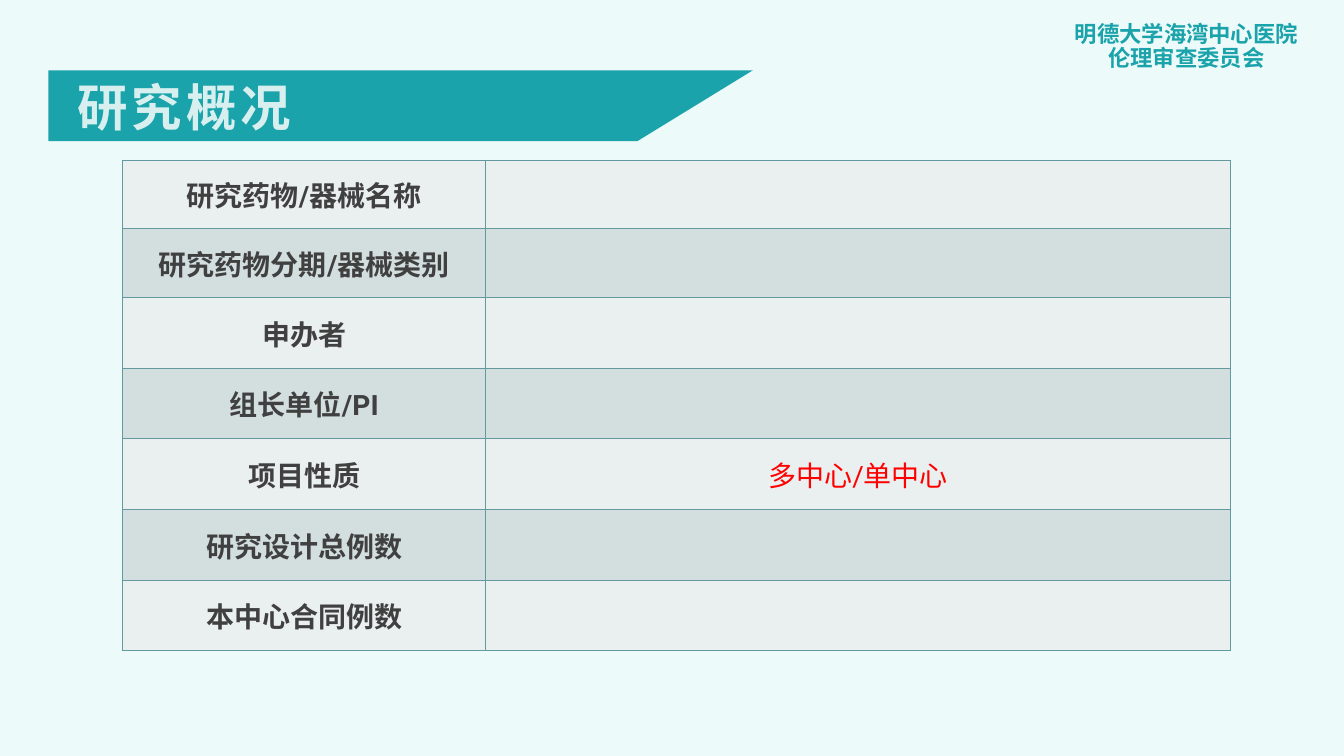
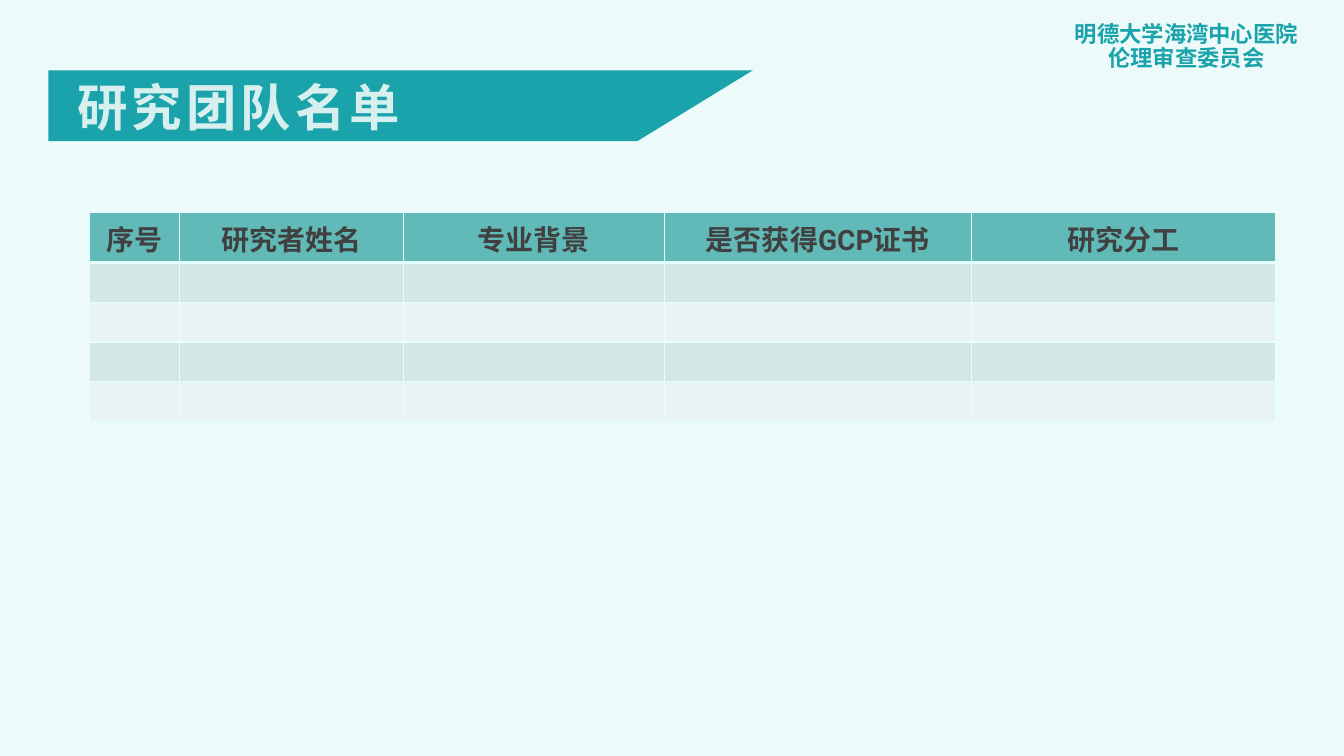
import pptx
import pptx.dml.color
import pptx.enum.text
import pptx.oxml.ns
import pptx.util
import lxml.etree

Pt = pptx.util.Pt
RGBColor = pptx.dml.color.RGBColor
qn = pptx.oxml.ns.qn
CENTER = pptx.enum.text.PP_ALIGN.CENTER
MIDDLE = pptx.enum.text.MSO_ANCHOR.MIDDLE
TOP = pptx.enum.text.MSO_ANCHOR.TOP

PAGE = RGBColor(0xED, 0xFA, 0xFA)
TEAL = RGBColor(0x1A, 0xA3, 0xAA)
TITLE_INK = RGBColor(0xD8, 0xEF, 0xEF)
INK = RGBColor(0x40, 0x40, 0x40)
RED = RGBColor(0xFF, 0x00, 0x00)
OVERVIEW_BANDS = (RGBColor(0xEA, 0xEF, 0xF0), RGBColor(0xD3, 0xDE, 0xDF))
OVERVIEW_LINE = RGBColor(0x64, 0x9A, 0x9F)
TEAM_HEADER = RGBColor(0x62, 0xBA, 0xB8)
TEAM_BANDS = (RGBColor(0xD3, 0xE7, 0xE6), RGBColor(0xEA, 0xF3, 0xF3))
TEAM_LINE = RGBColor(0xE3, 0xFF, 0xFF)

LATIN = "Roboto"
CJK = "Noto Sans CJK SC"

COMMITTEE = "明德大学海湾中心医院\n伦理审查委员会"
OVERVIEW = (
    ("研究药物/器械名称", ""),
    ("研究药物分期/器械类别", ""),
    ("申办者", ""),
    ("组长单位/PI", ""),
    ("项目性质", "多中心/单中心"),
    ("研究设计总例数", ""),
    ("本中心合同例数", ""),
)
TEAM_COLUMNS = ("序号", "研究者姓名", "专业背景", "是否获得GCP证书", "研究分工")
TEAM_ROWS = 4


def style_run(run, size, color, bold=True, latin=LATIN, spacing=0):
    run.font.size = Pt(size)
    run.font.bold = bold
    run.font.color.rgb = color
    run.font.name = latin
    properties = run.font._element
    lxml.etree.SubElement(properties, qn("a:ea"), typeface=CJK)
    if spacing:
        properties.set("spc", str(spacing * 100))


def add_band(slide, left, top, width, height, slant):
    builder = slide.shapes.build_freeform(Pt(left), Pt(top))
    builder.add_line_segments([
        (Pt(left + width), Pt(top)),
        (Pt(left + width - slant), Pt(top + height)),
        (Pt(left), Pt(top + height)),
    ])
    band = builder.convert_to_shape()
    band.shadow.inherit = False
    band.fill.solid()
    band.fill.fore_color.rgb = TEAL
    band.line.fill.background()


def add_committee(slide, left, top, width, height):
    frame = slide.shapes.add_textbox(Pt(left), Pt(top), Pt(width), Pt(height)).text_frame
    frame.word_wrap = True
    frame.text = COMMITTEE
    for paragraph in frame.paragraphs:
        paragraph.alignment = CENTER
        paragraph.line_spacing = 0.9
        style_run(paragraph.runs[0], 16, TEAL, latin=CJK)


def add_title(slide, title, left, top, width, height):
    frame = slide.shapes.add_textbox(Pt(left), Pt(top), Pt(width), Pt(height)).text_frame
    frame.word_wrap = True
    frame.vertical_anchor = MIDDLE
    frame.text = title
    style_run(frame.paragraphs[0].runs[0], 36, TITLE_INK, spacing=3)


def add_page(deck, title):
    slide = deck.slides.add_slide(deck.slide_layouts[6])
    slide.background.fill.solid()
    slide.background.fill.fore_color.rgb = PAGE
    add_band(slide, 34.5, 50.2, 503.3, 50.6, 82.5)
    add_committee(slide, 607.5, 13, 480, 42.5)
    add_title(slide, title, 48, 48.5, 864, 55.5)
    return slide


def add_grid(slide, left, top, columns, rows):
    table = slide.shapes.add_table(
        len(rows), len(columns), Pt(left), Pt(top), Pt(sum(columns)), Pt(sum(rows))
    ).table
    for column, width in zip(table.columns, columns):
        column.width = Pt(width)
    for row, height in zip(table.rows, rows):
        row.height = Pt(height)
    return table


def fill_cell(cell, text, fill, line, ink=INK, bold=True, anchor=MIDDLE, top=1, bottom=1):
    properties = cell._tc.get_or_add_tcPr()
    for side, width in (("L", 1), ("R", 1), ("T", top), ("B", bottom)):
        border = lxml.etree.SubElement(properties, qn("a:ln" + side), w=str(Pt(width)))
        solid = lxml.etree.SubElement(border, qn("a:solidFill"))
        lxml.etree.SubElement(solid, qn("a:srgbClr"), val=str(line))
    cell.fill.solid()
    cell.fill.fore_color.rgb = fill
    cell.vertical_anchor = anchor
    if text:
        cell.text_frame.text = text
        paragraph = cell.text_frame.paragraphs[0]
        paragraph.alignment = CENTER
        style_run(paragraph.runs[0], 20, ink, bold)
    else:
        cell.margin_top = cell.margin_bottom = 0


def add_overview_table(slide, left, top):
    heights = [49] * 2 + [50.5] * (len(OVERVIEW) - 2)
    table = add_grid(slide, left, top, (259.2, 532), heights)
    for index, (label, value) in enumerate(OVERVIEW):
        band = OVERVIEW_BANDS[index % 2]
        fill_cell(table.cell(index, 0), label, band, OVERVIEW_LINE)
        fill_cell(table.cell(index, 1), value, band, OVERVIEW_LINE, RED, False)


def add_team_table(slide, left, top):
    widths = (64, 160, 186.5, 219.5, 217.5)
    table = add_grid(slide, left, top, widths, [35.5] + [28.4] * TEAM_ROWS)
    for column, heading in enumerate(TEAM_COLUMNS):
        fill_cell(table.cell(0, column), heading, TEAM_HEADER, TEAM_LINE, anchor=TOP, bottom=3)
        for row in range(TEAM_ROWS):
            fill_cell(table.cell(row + 1, column), "", TEAM_BANDS[row % 2], TEAM_LINE,
                      top=1 if row else 3)


def main():
    deck = pptx.Presentation()
    deck.slide_width = Pt(960)
    deck.slide_height = Pt(540)
    add_overview_table(add_page(deck, "研究概况"), 87.7, 114.5)
    add_team_table(add_page(deck, "研究团队名单"), 64, 152)
    deck.save("out.pptx")


if __name__ == "__main__":
    main()
